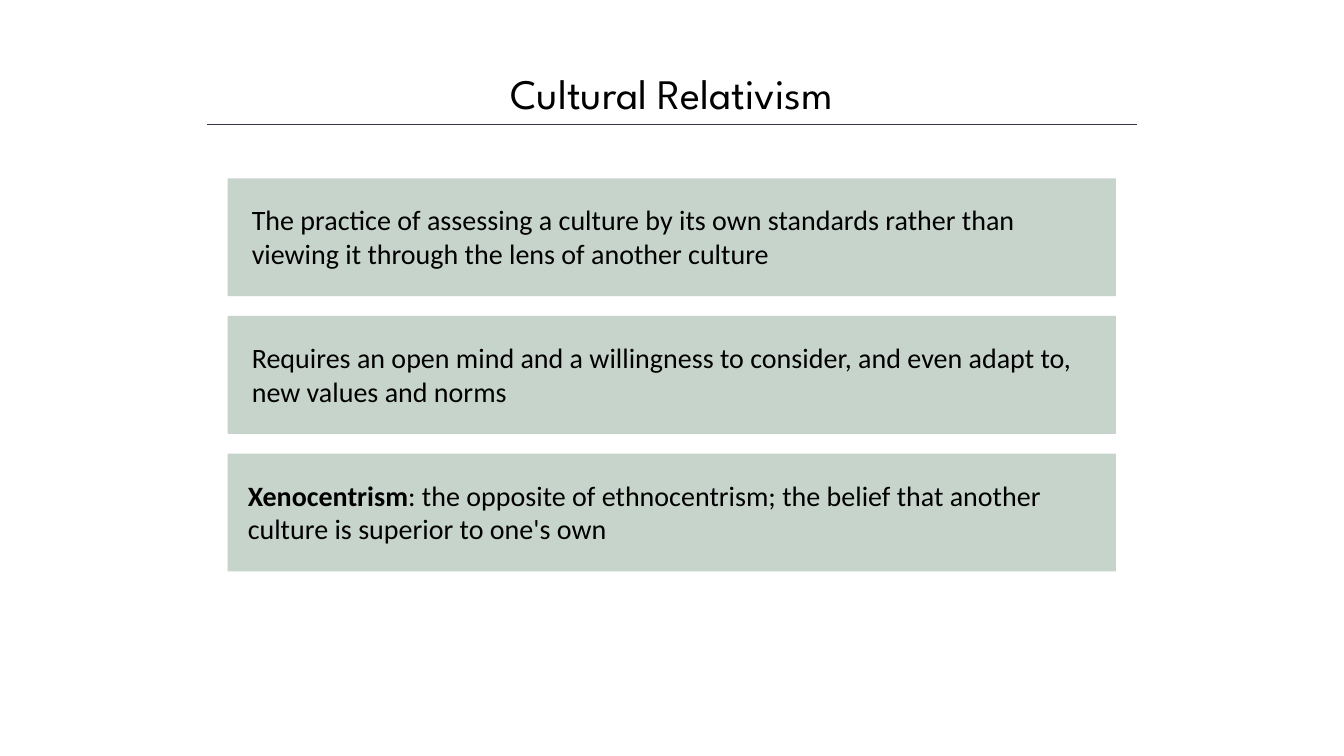
from lxml import etree
from pptx import Presentation
from pptx.dml.color import RGBColor
from pptx.enum.shapes import MSO_CONNECTOR, MSO_SHAPE
from pptx.enum.text import MSO_ANCHOR, MSO_AUTO_SIZE, PP_ALIGN
from pptx.oxml.ns import qn
from pptx.util import Pt

RECTANGLE = MSO_SHAPE.RECTANGLE
STRAIGHT = MSO_CONNECTOR.STRAIGHT
TOP = MSO_ANCHOR.TOP
NO_AUTOSIZE = MSO_AUTO_SIZE.NONE
LEFT, CENTER = PP_ALIGN.LEFT, PP_ALIGN.CENTER

BLACK = RGBColor(0x00, 0x00, 0x00)
NAVY = RGBColor(0x32, 0x35, 0x42)
SAGE = RGBColor(0xC7, 0xD4, 0xCB)

TITLE_FORMAT = {"name": "League Spartan", "size": Pt(30), "bold": False}
BODY_FORMAT = {"name": "Calibri", "size": Pt(20), "bold": False}
TERM_FORMAT = {**BODY_FORMAT, "bold": True}

PANEL_LEFT, PANEL_TOP, PANEL_WIDTH, PANEL_HEIGHT = 162.7, 127.4, 634.4, 84.2
PANEL_PITCH = 98.3
TEXT_TOP_INSET, TEXT_WIDTH, TEXT_HEIGHT = 14, 614.9, 55.4

STATEMENTS = [
    (172.8, [("The practice of assessing a culture by its own standards rather than "
              "viewing it through the lens of another culture", BODY_FORMAT)]),
    (172.8, [("Requires an open mind and a willingness to consider, and even adapt to, "
              "new values and norms", BODY_FORMAT)]),
    (169.9, [("Xenocentrism", TERM_FORMAT),
             (": the opposite of ethnocentrism; the belief that another culture is "
              "superior to one's own", BODY_FORMAT)]),
]


class SlideBuilder:
    """Holds the current slide and draws its elements in one style."""

    def __init__(self, slide):
        """Keep the slide to draw on."""
        self.slide = slide

    def fill_text(self, shape, runs, alignment):
        """Fill a shape with one paragraph of formatted runs."""
        frame = shape.text_frame
        settings = {"word_wrap": True, "auto_size": NO_AUTOSIZE, "vertical_anchor": TOP}
        for name, value in settings.items():
            setattr(frame, name, value)
        paragraph = frame.paragraphs[0]
        paragraph.alignment = alignment
        for text, run_format in runs:
            run = paragraph.add_run()
            run.text = text
            run.font.color.rgb = BLACK
            for name, value in run_format.items():
                setattr(run.font, name, value)

    def title(self, text, left, top, width, height):
        """Place and fill the title placeholder."""
        title = self.slide.shapes.title
        box = {"left": left, "top": top, "width": width, "height": height}
        for name, value in box.items():
            setattr(title, name, Pt(value))
        self.fill_text(title, [(text, TITLE_FORMAT)], CENTER)

    def rule(self, left, right, top):
        """Draw a thin horizontal line."""
        rule = self.slide.shapes.add_connector(
            STRAIGHT, Pt(left), Pt(top), Pt(right), Pt(top))
        rule.line.color.rgb = NAVY
        rule.line.width = Pt(1)
        etree.SubElement(rule._element.spPr, qn("a:effectLst"))

    def rectangle(self, shapes, left, top, width, height):
        """Add a plain sage rectangle."""
        shape = shapes.add_shape(RECTANGLE, Pt(left), Pt(top), Pt(width), Pt(height))
        shape.shadow.inherit = False
        shape.fill.solid()
        shape.fill.fore_color.rgb = SAGE
        shape.line.fill.background()
        return shape

    def statement(self, top, text_left, runs):
        """Group a panel with the text it carries."""
        shapes = self.slide.shapes.add_group_shape().shapes
        self.rectangle(shapes, PANEL_LEFT, top, PANEL_WIDTH, PANEL_HEIGHT)
        text = self.rectangle(
            shapes, text_left, top + TEXT_TOP_INSET, TEXT_WIDTH, TEXT_HEIGHT)
        self.fill_text(text, runs, LEFT)


def main():
    """Build and save the slide."""
    presentation = Presentation()
    presentation.slide_width = Pt(960)
    presentation.slide_height = Pt(540)
    slide = presentation.slides.add_slide(presentation.slide_layouts[5])
    builder = SlideBuilder(slide)
    builder.title("Cultural Relativism", 120, 44.6, 720, 44)
    builder.rule(148.2, 812, 88.8)
    for index, (text_left, runs) in enumerate(STATEMENTS):
        builder.statement(PANEL_TOP + index * PANEL_PITCH, text_left, runs)
    presentation.save("out.pptx")


if __name__ == "__main__":
    main()
